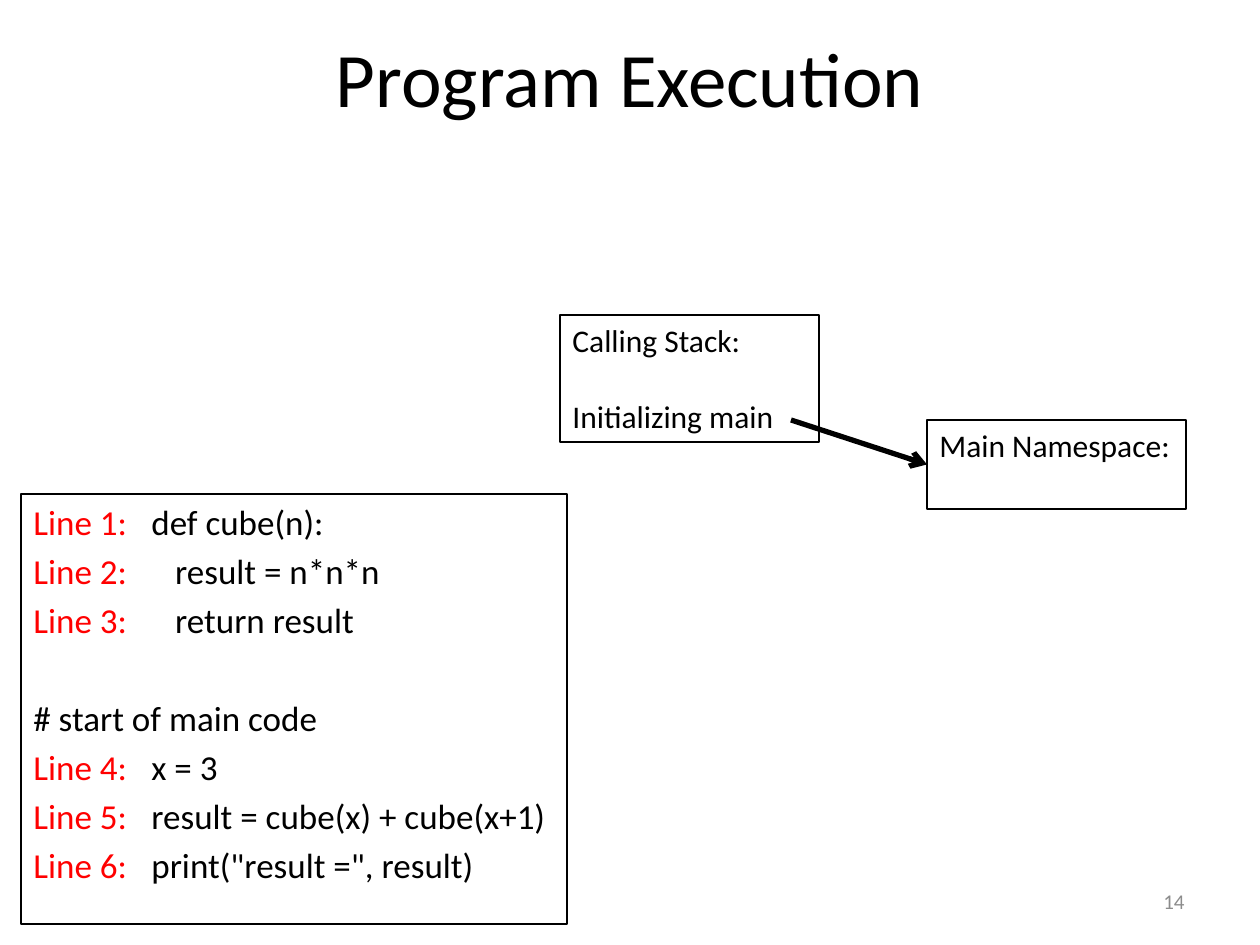
from dataclasses import dataclass

from lxml.etree import SubElement
from pptx import Presentation
from pptx.dml.color import RGBColor
from pptx.enum.shapes import MSO_CONNECTOR, MSO_SHAPE
from pptx.enum.text import MSO_ANCHOR as Anchor, PP_ALIGN as Align
from pptx.oxml.ns import qn
from pptx.util import Emu, Pt

SCALE = 914400 / 126
FONT = "Calibri"
BLACK, RED, GREY = "000000", "FF0000", "8C8C8C"
CODE_TAB = 118


@dataclass
class Box:
    left: int
    top: int
    width: int
    height: int


@dataclass
class Line:
    text: str
    label: str = ""
    before: float = 0


def px(length: int) -> Emu:
    return Emu(round(length * SCALE))


def color(value: str) -> RGBColor:
    return RGBColor.from_string(value)


def place(box: Box) -> list[Emu]:
    return [px(length) for length in (box.left, box.top, box.width, box.height)]


def add_run(paragraph, text: str, size: int, ink: str) -> None:
    run = paragraph.add_run()
    run.text = text
    run.font.name = FONT
    run.font.size = Pt(size)
    run.font.color.rgb = color(ink)


def write(shape, lines: list[Line], *, size: int, ink: str = BLACK,
          align=Align.LEFT, anchor=Anchor.TOP) -> None:
    frame = shape.text_frame
    frame.word_wrap = True
    frame.vertical_anchor = anchor
    for index, line in enumerate(lines):
        paragraph = frame.add_paragraph() if index else frame.paragraphs[0]
        paragraph.alignment = align
        paragraph.space_before = Pt(line.before)
        if line.label:
            tabs = SubElement(paragraph._p.get_or_add_pPr(), qn("a:tabLst"))
            SubElement(tabs, qn("a:tab"), pos=str(px(CODE_TAB)), algn="l")
            add_run(paragraph, line.label + "\t", size, RED)
        add_run(paragraph, line.text, size, ink)


def add_panel(slide, box: Box, lines: list[Line], size: int):
    panel = slide.shapes.add_shape(MSO_SHAPE.RECTANGLE, *place(box))
    panel.shadow.inherit = False
    panel.fill.background()
    panel.line.color.rgb = color(BLACK)
    panel.line.width = Pt(0.75)
    write(panel, lines, size=size)
    return panel


def add_arrow(slide, left: int, top: int, target, site: int) -> None:
    arrow = slide.shapes.add_connector(
        MSO_CONNECTOR.STRAIGHT, px(left), px(top), target.left, target.top)
    arrow.end_connect(target, site)
    arrow.line.color.rgb = color(BLACK)
    arrow.line.width = Pt(3)
    SubElement(arrow.line._get_or_add_ln(), qn("a:tailEnd"), type="arrow")
    SubElement(arrow._element.spPr, qn("a:effectLst"))


def main() -> None:
    deck = Presentation()
    deck.slide_width, deck.slide_height = px(1260), px(945)
    slide = deck.slides.add_slide(deck.slide_layouts[6])

    title = slide.shapes.add_textbox(*place(Box(63, 21, 1134, 111)))
    write(title, [Line("Program Execution")], size=44,
          align=Align.CENTER, anchor=Anchor.MIDDLE)

    page_number = slide.shapes.add_textbox(*place(Box(903, 876, 294, 50)))
    write(page_number, [Line("14")], size=12, ink=GREY,
          align=Align.RIGHT, anchor=Anchor.MIDDLE)

    namespace = add_panel(slide, Box(927, 420, 259, 89), [Line("Main Namespace:")], 18)
    add_panel(slide, Box(560, 315, 259, 127),
              [Line("Calling Stack:"), Line("Initializing main", before=22)], 18)
    add_arrow(slide, 791, 420, namespace, 1)

    code = [
        Line("def cube(n):", "Line 1:"),
        Line("   result = n*n*n", "Line 2:", 4),
        Line("   return result", "Line 3:", 4),
        Line("# start of main code", before=32),
        Line("x = 3", "Line 4:", 4),
        Line("result = cube(x) + cube(x+1)", "Line 5:", 4),
        Line('print("result =", result)', "Line 6:", 4),
    ]
    add_panel(slide, Box(21, 494, 546, 430), code, 20)

    deck.save("out.pptx")


if __name__ == "__main__":
    main()
